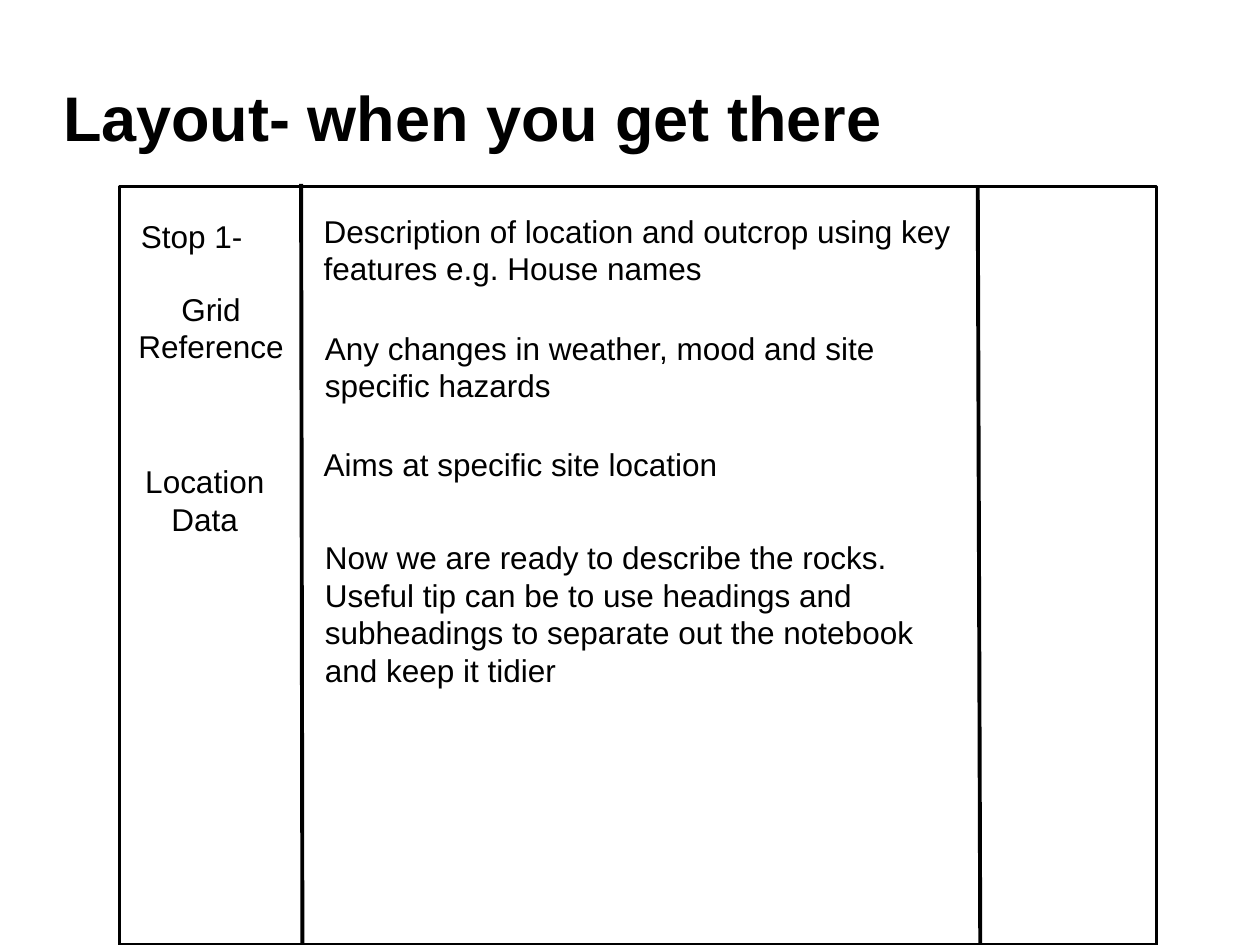
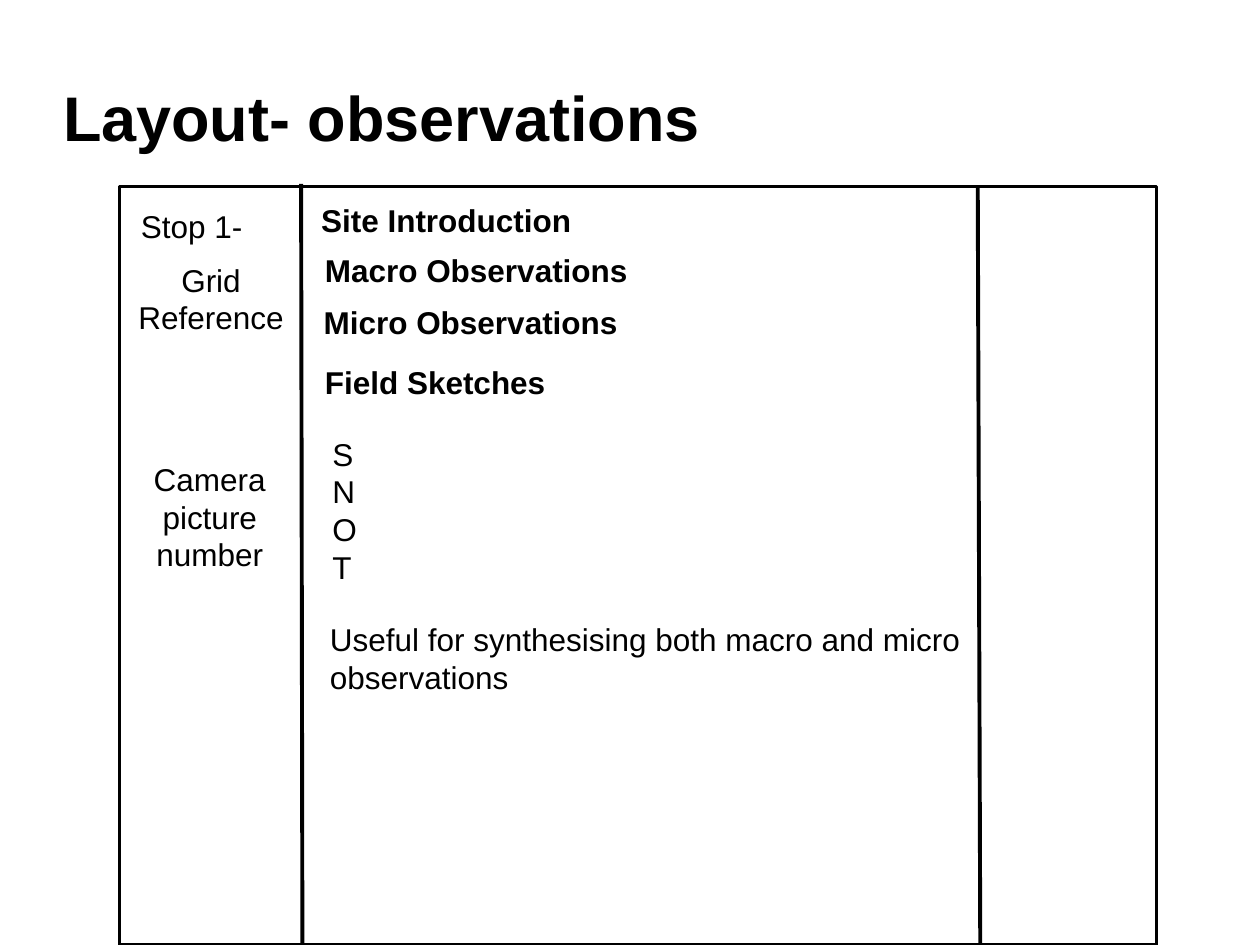
"""Build two slides showing how to lay out a field notebook page."""
import pptx
import pptx.dml.color
import pptx.enum.shapes
import pptx.enum.text
import pptx.oxml
import pptx.util

Inches = pptx.util.Inches
Pt = pptx.util.Pt
ALIGN = pptx.enum.text.PP_ALIGN
ANCHOR = pptx.enum.text.MSO_ANCHOR
AUTO_SIZE = pptx.enum.text.MSO_AUTO_SIZE
BLACK = pptx.dml.color.RGBColor(0, 0, 0)
WHITE = pptx.dml.color.RGBColor(255, 255, 255)
FONT = "Arial"
TITLE_ONLY = 5
EFFECTS = ('<a:effectLst xmlns:a='
           '"http://schemas.openxmlformats.org/drawingml/2006/main"/>')


def write(tf, text, size=18, bold=False, align=ALIGN.LEFT):
    tf.word_wrap = True
    tf.text = text
    for p in tf.paragraphs:
        p.alignment = align
        for r in p.runs:
            r.font.name = FONT
            r.font.size = Pt(size)
            r.font.bold = bold
            r.font.color.rgb = BLACK


class Notebook:
    def __init__(self, prs):
        self.prs = prs
        self.s = None

    def page(self, title):
        self.s = self.prs.slides.add_slide(self.prs.slide_layouts[TITLE_ONLY])
        self.s.background.fill.solid()
        self.s.background.fill.fore_color.rgb = WHITE
        self.title(title)
        self.frame()
        self.margins()

    def title(self, text):
        sp = self.s.shapes.title
        sp.left, sp.top = Inches(0.5), Inches(0.3)
        sp.width, sp.height = Inches(9), Inches(1.25)
        tf = sp.text_frame
        tf.margin_left = tf.margin_right = tf.margin_top = tf.margin_bottom = 0
        tf.vertical_anchor = ANCHOR.MIDDLE
        tf.auto_size = AUTO_SIZE.NONE
        write(tf, text, size=36, bold=True)

    def frame(self):
        sp = self.s.shapes.add_shape(
            pptx.enum.shapes.MSO_SHAPE.RECTANGLE,
            Inches(0.95), Inches(1.48), Inches(8.23), Inches(6.02))
        sp.shadow.inherit = False
        sp.fill.solid()
        sp.fill.fore_color.rgb = WHITE
        sp.line.color.rgb = BLACK
        sp.line.width = Pt(2)

    def margins(self):
        group = self.s.shapes.add_group_shape()
        self.rule(group, 2.39, 1.46, 2.4, 7.5)
        self.rule(group, 7.76, 1.47, 7.78, 7.51)

    def rule(self, group, x1, y1, x2, y2):
        line = group.shapes.add_connector(
            pptx.enum.shapes.MSO_CONNECTOR.STRAIGHT,
            Inches(x1), Inches(y1), Inches(x2), Inches(y2))
        line.line.color.rgb = BLACK
        line.line.width = Pt(2.25)
        line._element.spPr.append(pptx.oxml.parse_xml(EFFECTS))

    def note(self, text, left, top, width=5.25, lines=1, **style):
        height = 0.1 + 0.3 * lines
        sp = self.s.shapes.add_textbox(
            Inches(left), Inches(top), Inches(width), Inches(height))
        write(sp.text_frame, text, **style)
        sp.text_frame.auto_size = AUTO_SIZE.SHAPE_TO_FIT_TEXT

    def stop(self, stop_top, grid_top):
        self.note("Stop 1-", 1.02, stop_top, 1.3)
        self.label("Grid Reference", 0.95, grid_top, 1.45)

    def label(self, text, left, top, width, lines=2):
        self.note(text, left, top, width, lines, align=ALIGN.CENTER)


def arrival(book):
    book.page("Layout- when you get there")
    book.label("Location Data", 1, 3.62, 1.25)
    book.stop(1.67, 2.25)
    book.note("Description of location and outcrop using key features "
              "e.g. House names", 2.47, 1.63, 5.58, lines=2)
    book.note("Any changes in weather, mood and site specific hazards",
              2.48, 2.56, lines=2)
    book.note("Aims at specific site location", 2.47, 3.48)
    book.note("Now we are ready to describe the rocks. Useful tip can be to "
              "use headings and subheadings to separate out the notebook and "
              "keep it tidier", 2.48, 4.22, lines=4)


def observations(book):
    book.page("Layout- observations")
    book.stop(1.59, 2.02)
    for heading, left, top, width in (
            ("Site Introduction", 2.45, 1.55, 5.58),
            ("Macro Observations", 2.48, 1.94, 5.58),
            ("Micro Observations", 2.47, 2.36, 5.58),
            ("Field Sketches", 2.48, 2.83, 5.25)):
        book.note(heading, left, top, width, bold=True)
    book.note("\n".join("SNOT"), 2.54, 3.4, lines=4)
    book.note("Useful for synthesising both macro and micro observations",
              2.52, 4.87, lines=2)
    book.label("Camera picture number", 0.98, 3.6, 1.37, lines=3)


def main():
    prs = pptx.Presentation()
    prs.slide_width, prs.slide_height = Inches(10), Inches(7.5)
    book = Notebook(prs)
    arrival(book)
    observations(book)
    prs.save("out.pptx")


if __name__ == "__main__":
    main()
